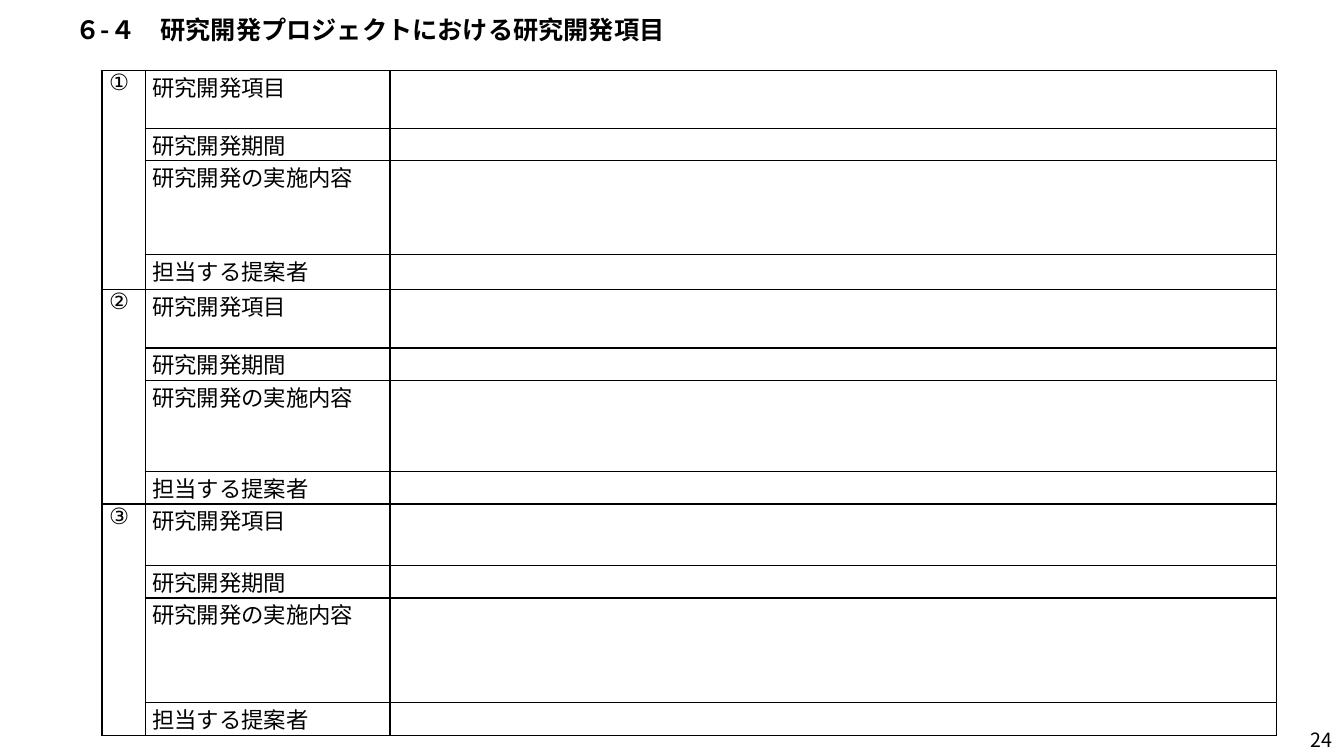
from dataclasses import dataclass
from lxml.etree import SubElement as Sub
from pptx import Presentation
from pptx.dml.color import RGBColor as Rgb
from pptx.enum.text import MSO_ANCHOR as Anchor, MSO_AUTO_SIZE as Fit, PP_ALIGN as Align
from pptx.oxml.ns import qn
from pptx.util import Cm, Pt

TITLE = "６-４　研究開発プロジェクトにおける研究開発項目"
PAGE = "24"
MARKS = ["①", "②", "③"]
LABELS = ["研究開発項目", "研究開発期間", "研究開発の実施内容", "担当する提案者"]
WIDTHS = [1.09, 6.17, 22.33]
HEIGHTS = [
    (1.45, 0.82, 2.36, 0.89),
    (1.47, 0.82, 2.29, 0.82),
    (1.55, 0.82, 2.64, 0.82),
]


@dataclass(frozen=True)
class Theme:
    ink: str = "000000"
    latin: str = "Arial"
    asian: str = "Noto Sans CJK JP"
    head: int = 18
    cell: int = 16
    page: int = 14
    line: int = 1


theme = Theme()


def style(para, size, face, bold=False):
    for run in para.runs:
        font = run.font
        font.size, font.bold, font.name = Pt(size), bold, face
        font.color.rgb = Rgb.from_string(theme.ink)
        Sub(run._r.get_or_add_rPr(), qn("a:ea"), typeface=theme.asian)


def border(cell):
    props = cell._tc.get_or_add_tcPr()
    for side in ("lnL", "lnR", "lnT", "lnB"):
        line = Sub(props, qn(f"a:{side}"), w=str(Pt(theme.line)))
        fill = Sub(line, qn("a:solidFill"))
        Sub(fill, qn("a:srgbClr"), val=theme.ink)


def put_title(slide):
    title = slide.shapes.title
    title.left, title.top, title.width, title.height = Cm(1.65), Cm(0.36), Cm(29.21), Cm(0.84)
    frame = title.text_frame
    frame.text = TITLE
    frame.auto_size = Fit.NONE
    frame.vertical_anchor = Anchor.MIDDLE
    para = frame.paragraphs[0]
    para.alignment, para.line_spacing = Align.LEFT, 0.9
    style(para, theme.head, theme.asian, True)


def put_page(slide):
    frame = slide.shapes.add_textbox(Cm(31.67), Cm(18.26), Cm(2.16), Cm(0.74)).text_frame
    frame.text = PAGE
    frame.word_wrap = True
    frame.vertical_anchor = Anchor.MIDDLE
    para = frame.paragraphs[0]
    para.alignment = Align.RIGHT
    style(para, theme.page, theme.asian)


def put_table(slide):
    tall = [size for group in HEIGHTS for size in group]
    table = slide.shapes.add_table(
        len(tall), len(WIDTHS), Cm(2.57), Cm(1.78), Cm(sum(WIDTHS)), Cm(sum(tall))
    ).table
    table.first_row = table.horz_banding = False
    for col, size in zip(table.columns, WIDTHS):
        col.width = Cm(size)
    for row, size in zip(table.rows, tall):
        row.height = Cm(size)
    step = len(LABELS)
    for at in range(len(tall)):
        group, part = divmod(at, step)
        mark = "" if part else MARKS[group]
        for col, text in enumerate((mark, LABELS[part], "")):
            cell = table.cell(at, col)
            cell.margin_left = cell.margin_right = Cm(0.18)
            cell.margin_top = cell.margin_bottom = 0
            border(cell)
            cell.fill.background()
            para = cell.text_frame.paragraphs[0]
            para.text = text
            para.alignment = Align.JUSTIFY
            style(para, theme.cell, theme.latin)
    for top in range(0, len(tall), step):
        table.cell(top, 0).merge(table.cell(top + step - 1, 0))


def main():
    deck = Presentation()
    deck.slide_width, deck.slide_height = Cm(33.87), Cm(19.05)
    slide = deck.slides.add_slide(deck.slide_layouts[5])
    put_page(slide)
    put_title(slide)
    put_table(slide)
    deck.save("out.pptx")


if __name__ == "__main__":
    main()
